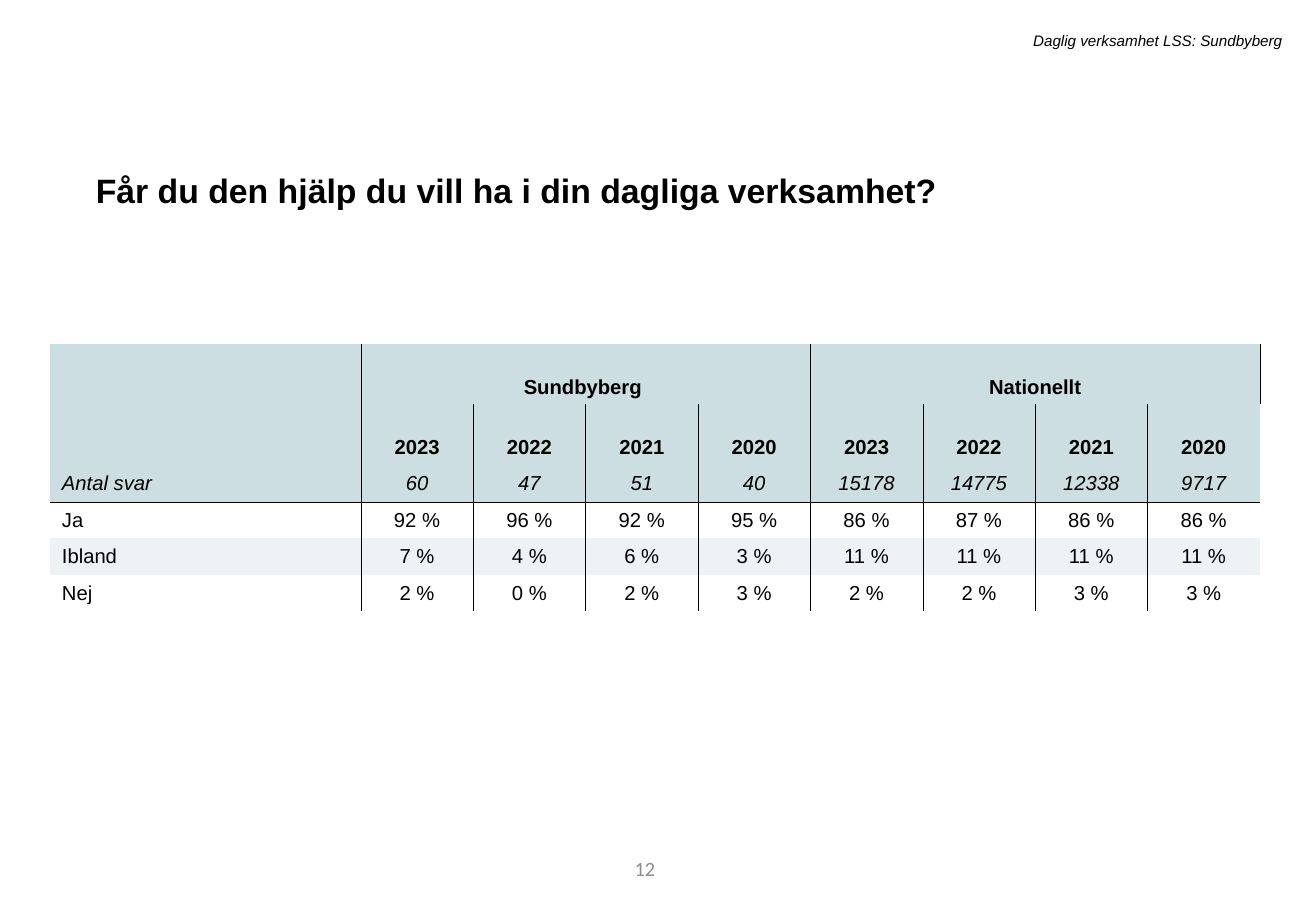
from dataclasses import dataclass, field

import lxml.etree
import pptx
import pptx.dml.color
import pptx.enum.text
import pptx.oxml.ns
import pptx.util

Inches = pptx.util.Inches
Pt = pptx.util.Pt
ALIGN = pptx.enum.text.PP_ALIGN
ANCHOR = pptx.enum.text.MSO_ANCHOR

BLACK, GREY = "000000", "8C8C8C"
HEADER_FILL, BAND_FILL = "CCDEE1", "EDF3F4"
YEARS = ["2023", "2022", "2021", "2020"]
REGIONS = ["Sundbyberg ", "Nationellt"]
LABEL_WIDTH, YEAR_WIDTH = 2.56, 0.925
LAST_COLUMN = len(REGIONS) * len(YEARS)


@dataclass
class Label:
    """A free text with its place and its font and paragraph formats."""
    text: str
    box: tuple[float, float, float, float]
    font: dict
    paragraph: dict = field(default_factory=dict)
    anchor: ANCHOR = ANCHOR.TOP


@dataclass
class Row:
    values: list[str]
    height: float = 0.3
    fill: str | None = None
    font: dict = field(default_factory=dict)
    anchor: ANCHOR = ANCHOR.MIDDLE


LABELS = [
    Label("12", (3.05, 6.95, 2.44, 0.4), {"size": Pt(12), "name": "Calibri"},
          {"alignment": ALIGN.RIGHT}, ANCHOR.MIDDLE),
    Label("Får du den hjälp du vill ha i din dagliga verksamhet?",
          (0.69, 1.28, 9.4, 0.47), {"size": Pt(20), "name": "Arial", "bold": True},
          {"line_spacing": 1.2, "space_before": Pt(10)}),
    Label("Daglig verksamhet LSS: Sundbyberg", (1.79, 0.21, 8.86, 0.25),
          {"size": Pt(9), "name": "Arial", "italic": True}, {"alignment": ALIGN.RIGHT}),
]

HEADING = {"height": 0.5, "fill": HEADER_FILL, "font": {"bold": True}, "anchor": ANCHOR.BOTTOM}
ROWS = [
    Row([""] + [value for region in REGIONS for value in (region, "", "", "")], **HEADING),
    Row([""] + YEARS * len(REGIONS), **HEADING),
    Row(["Antal svar", "60", "47", "51", "40", "15178", "14775", "12338", "9717"],
        fill=HEADER_FILL, font={"italic": True}),
    Row(["Ja", "92 %", "96 %", "92 %", "95 %", "86 %", "87 %", "86 %", "86 %"]),
    Row(["Ibland", "7 %", "4 %", "6 %", "3 %", "11 %", "11 %", "11 %", "11 %"], fill=BAND_FILL),
    Row(["Nej", "2 %", "0 %", "2 %", "3 %", "2 %", "2 %", "3 %", "3 %"]),
]
REGION_ROW, COUNT_ROW = 0, 2


def rgb(color: str) -> pptx.dml.color.RGBColor:
    return pptx.dml.color.RGBColor.from_string(color)


def write(frame, text: str, font: dict, paragraph: dict, color: str = BLACK) -> None:
    line = frame.paragraphs[0]
    line.text = text
    line.font.color.rgb = rgb(color)
    for target, formats in ((line.font, font), (line, paragraph)):
        for name, value in formats.items():
            setattr(target, name, value)


def add_label(slide, label: Label, color: str) -> None:
    frame = slide.shapes.add_textbox(*map(Inches, label.box)).text_frame
    frame.word_wrap = True
    frame.vertical_anchor = label.anchor
    write(frame, label.text, label.font, label.paragraph, color)


def border_sides(row: int, column: int) -> str:
    """Return the sides of a cell that carry a line, as letters of L, R, T and B."""
    if row == REGION_ROW:
        return "LR" if column else "R"
    sides = ("L" if column else "") + ("R" if column < LAST_COLUMN else "")
    return sides + {COUNT_ROW: "B", COUNT_ROW + 1: "T"}.get(row, "")


def set_borders(cell, sides: str) -> None:
    properties = cell._tc.get_or_add_tcPr()
    qn = pptx.oxml.ns.qn
    for side in "LRTB":
        line = lxml.etree.SubElement(properties, qn(f"a:ln{side}"), w=str(Pt(0.25)))
        if side in sides:
            solid = lxml.etree.SubElement(line, qn("a:solidFill"))
            lxml.etree.SubElement(solid, qn("a:srgbClr"), val=BLACK)
        else:
            lxml.etree.SubElement(line, qn("a:noFill"))


def add_results(slide) -> None:
    width = LABEL_WIDTH + LAST_COLUMN * YEAR_WIDTH
    height = sum(row.height for row in ROWS)
    results = slide.shapes.add_table(len(ROWS), LAST_COLUMN + 1, Inches(0.41), Inches(2.83),
                                     Inches(width), Inches(height)).table
    results.first_row = results.horz_banding = False
    for index, column in enumerate(results.columns):
        column.width = Inches(YEAR_WIDTH if index else LABEL_WIDTH)
    for start in range(1, LAST_COLUMN, len(YEARS)):
        results.cell(REGION_ROW, start).merge(results.cell(REGION_ROW, start + len(YEARS) - 1))
    for r, row in enumerate(ROWS):
        results.rows[r].height = Inches(row.height)
        for c, value in enumerate(row.values):
            cell = results.cell(r, c)
            set_borders(cell, "" if cell.is_spanned else border_sides(r, c))
            if row.fill:
                cell.fill.solid()
                cell.fill.fore_color.rgb = rgb(row.fill)
            else:
                cell.fill.background()
            cell.vertical_anchor = row.anchor
            write(cell.text_frame, value, {"size": Pt(12), "name": "Arial", **row.font},
                  {"alignment": ALIGN.CENTER if c else ALIGN.LEFT})


def main() -> None:
    deck = pptx.Presentation()
    deck.slide_width, deck.slide_height = Inches(10.83), Inches(7.5)
    slide = deck.slides.add_slide(deck.slide_layouts[6])
    page_number, question, survey = LABELS
    add_label(slide, page_number, GREY)
    add_label(slide, question, BLACK)
    add_results(slide)
    add_label(slide, survey, BLACK)
    deck.save("out.pptx")


if __name__ == "__main__":
    main()
